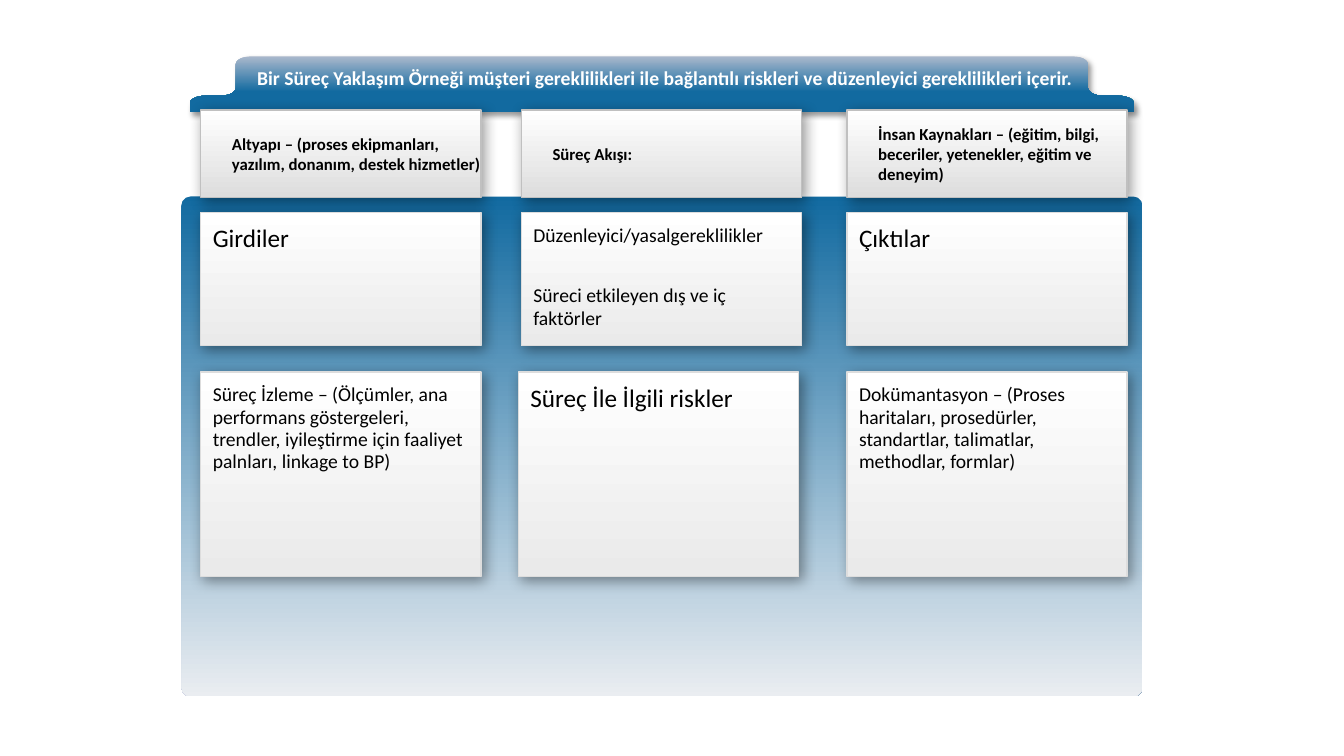
from dataclasses import dataclass
from math import cos, pi, sin

from lxml.etree import SubElement
from pptx import Presentation
from pptx.dml.color import RGBColor
from pptx.enum.shapes import MSO_SHAPE as Preset
from pptx.enum.text import MSO_ANCHOR as Anchor, MSO_AUTO_SIZE as AutoSize, PP_ALIGN as Align
from pptx.oxml.ns import qn
from pptx.util import Inches, Pt

Point = tuple[float, float]


@dataclass(frozen=True)
class Theme:
    font: str = "Calibri"
    blue: str = "126AA0"
    banner_top: str = "AAB8CC"
    panel_bottom: str = "EAEDF1"
    white: str = "FFFFFF"
    black: str = "000000"
    header_bottom: str = "DDDDDD"
    header_border: str = "C0C0C0"
    card_bottom: str = "EAEAEA"
    card_border: str = "DDDDDD"
    small: int = 12
    medium: int = 14
    large: int = 18


THEME = Theme()


@dataclass(frozen=True)
class CardStyle:
    bottom: str
    border: str
    insets: tuple[float, float, float, float]
    anchor: Anchor
    bold: bool
    line_spacing: float


@dataclass(frozen=True)
class Row:
    top: float
    height: float
    style: CardStyle


@dataclass(frozen=True)
class Card:
    left: float
    row: Row
    size: int
    paragraphs: tuple[str, ...]


HEADER_STYLE = CardStyle(THEME.header_bottom, THEME.header_border, (0.31, 0, 0, 0),
                         Anchor.MIDDLE, True, 1.0)
BODY_STYLE = CardStyle(THEME.card_bottom, THEME.card_border, (0.12, 0.12, 0.16, 0.08),
                       Anchor.TOP, False, 0.95)
HEADERS = Row(1.09, 0.87, HEADER_STYLE)
FLOW = Row(2.11, 1.32, BODY_STYLE)
CONTROL = Row(3.69, 2.03, BODY_STYLE)

CARD_WIDTH = 2.78
PARAGRAPH_GAP = 27
LEFT, MIDDLE, RIGHT = 1.99, 5.17, 8.4

CARDS = (
    Card(LEFT, HEADERS, THEME.small,
         ("Altyapı – (proses ekipmanları, yazılım, donanım, destek hizmetler)",)),
    Card(LEFT, FLOW, THEME.large, ("Girdiler",)),
    Card(MIDDLE, HEADERS, THEME.small, ("Süreç Akışı:",)),
    Card(MIDDLE, FLOW, THEME.medium,
         ("Düzenleyici/yasalgereklilikler", "Süreci etkileyen dış ve iç faktörler")),
    Card(RIGHT, HEADERS, THEME.small,
         ("İnsan Kaynakları – (eğitim, bilgi, beceriler, yetenekler, eğitim ve deneyim)",)),
    Card(RIGHT, FLOW, THEME.large, ("Çıktılar",)),
    Card(LEFT, CONTROL, THEME.medium,
         ("Süreç İzleme – (Ölçümler, ana performans göstergeleri, trendler, "
          "iyileştirme için faaliyet palnları, linkage to BP)",)),
    Card(MIDDLE - 0.03, CONTROL, THEME.large, ("Süreç İle İlgili riskler",)),
    Card(RIGHT, CONTROL, THEME.medium,
         ("Dokümantasyon – (Proses haritaları, prosedürler, standartlar, "
          "talimatlar, methodlar, formlar)",)),
)


def fill_down(shape, top: str, bottom: str, end: float = 1.0) -> None:
    """Vertical gradient from the top colour to the bottom colour."""
    shape.fill.gradient()
    shape.fill.gradient_angle = 270
    for stop, color, position in zip(shape.fill.gradient_stops, (top, bottom), (0, end)):
        stop.color.rgb = RGBColor.from_string(color)
        stop.position = position


def add_shadow(shape, blur: float) -> None:
    shape.shadow.inherit = False
    effects = shape.element.spPr.find(qn("a:effectLst"))
    shadow = SubElement(effects, qn("a:outerShdw"), blurRad=str(Pt(blur)), dist=str(Pt(3)),
                        dir=str(45 * 60000), algn="tl", rotWithShape="0")
    color = SubElement(shadow, qn("a:srgbClr"), val=THEME.black)
    SubElement(color, qn("a:alpha"), val="40000")


def set_insets(frame, insets: tuple[float, float, float, float]) -> None:
    (frame.margin_left, frame.margin_top,
     frame.margin_right, frame.margin_bottom) = map(Inches, insets)


def add_run(paragraph, text: str, size: int, color: str, bold: bool) -> None:
    run = paragraph.add_run()
    run.text = text
    run.font.name = THEME.font
    run.font.size = Pt(size)
    run.font.bold = bold
    run.font.color.rgb = RGBColor.from_string(color)


def rounded(start: Point, corner: Point, end: Point, steps: int = 10) -> list[Point]:
    """Points on the quarter ellipse that rounds a corner."""
    center = [s + e - c for s, c, e in zip(start, corner, end)]
    angles = [pi / 2 * step / steps for step in range(steps + 1)]
    return [(center[0] + (start[0] - center[0]) * cos(a) + (end[0] - center[0]) * sin(a),
             center[1] + (start[1] - center[1]) * cos(a) + (end[1] - center[1]) * sin(a))
            for a in angles]


def add_banner(shapes) -> None:
    axis = 6.565
    right_side = [
        *rounded((10.64, 0.56), (10.79, 0.56), (10.79, 0.64)),
        *rounded((10.79, 0.87), (10.79, 0.95), (10.94, 0.95)),
        *rounded((11.09, 0.95), (11.25, 0.95), (11.25, 1.03)),
        (11.25, 1.11),
    ]
    left_side = [(2 * axis - x, y) for x, y in reversed(right_side)]
    outline = [(Inches(x), Inches(y)) for x, y in right_side + left_side]
    builder = shapes.build_freeform(*outline[0])
    builder.add_line_segments(outline[1:], close=True)
    banner = builder.convert_to_shape()
    fill_down(banner, THEME.banner_top, THEME.blue, 0.64)
    banner.line.fill.background()
    add_shadow(banner, 4)


def add_panel(shapes) -> None:
    panel = shapes.add_shape(Preset.ROUNDED_RECTANGLE, Inches(1.8), Inches(1.95),
                             Inches(9.53), Inches(4.96))
    panel.adjustments[0] = 0.018
    fill_down(panel, THEME.blue, THEME.panel_bottom)
    panel.line.fill.background()
    panel.shadow.inherit = False


def add_card(shapes, card: Card) -> None:
    style = card.row.style
    box = shapes.add_shape(Preset.RECTANGLE, Inches(card.left), Inches(card.row.top),
                           Inches(CARD_WIDTH), Inches(card.row.height))
    fill_down(box, THEME.white, style.bottom)
    box.line.color.rgb = RGBColor.from_string(style.border)
    box.line.width = Pt(1)
    add_shadow(box, 10)
    frame = box.text_frame
    frame.word_wrap = True
    frame.vertical_anchor = style.anchor
    set_insets(frame, style.insets)
    for index, text in enumerate(card.paragraphs):
        paragraph = frame.add_paragraph() if index else frame.paragraphs[0]
        paragraph.alignment = Align.LEFT
        paragraph.line_spacing = style.line_spacing
        paragraph.space_before = Pt(PARAGRAPH_GAP if index else 0)
        add_run(paragraph, text, card.size, THEME.black, style.bold)


def place_title(title) -> None:
    title.left, title.top = Inches(2.41), Inches(0.6)
    title.width, title.height = Inches(8.74), Inches(0.34)
    frame = title.text_frame
    frame.word_wrap = True
    frame.auto_size = AutoSize.SHAPE_TO_FIT_TEXT
    frame.vertical_anchor = Anchor.TOP
    set_insets(frame, (0.14, 0.05, 0.1, 0.05))
    paragraph = frame.paragraphs[0]
    paragraph.alignment = Align.LEFT
    add_run(paragraph, "Bir Süreç Yaklaşım Örneği müşteri gereklilikleri ile bağlantılı "
            "riskleri ve düzenleyici gereklilikleri içerir.", THEME.medium, THEME.white, True)
    # Bring the title in front of the banner
    title.element.getparent().append(title.element)


def main() -> None:
    deck = Presentation()
    deck.slide_width, deck.slide_height = Inches(13.33), Inches(7.5)
    slide = deck.slides.add_slide(deck.slide_layouts[5])

    # Background parts
    add_banner(slide.shapes)
    add_panel(slide.shapes)

    # Process cards
    for card in CARDS:
        add_card(slide.shapes, card)

    # Heading
    place_title(slide.shapes.title)
    deck.save("out.pptx")


if __name__ == "__main__":
    main()
